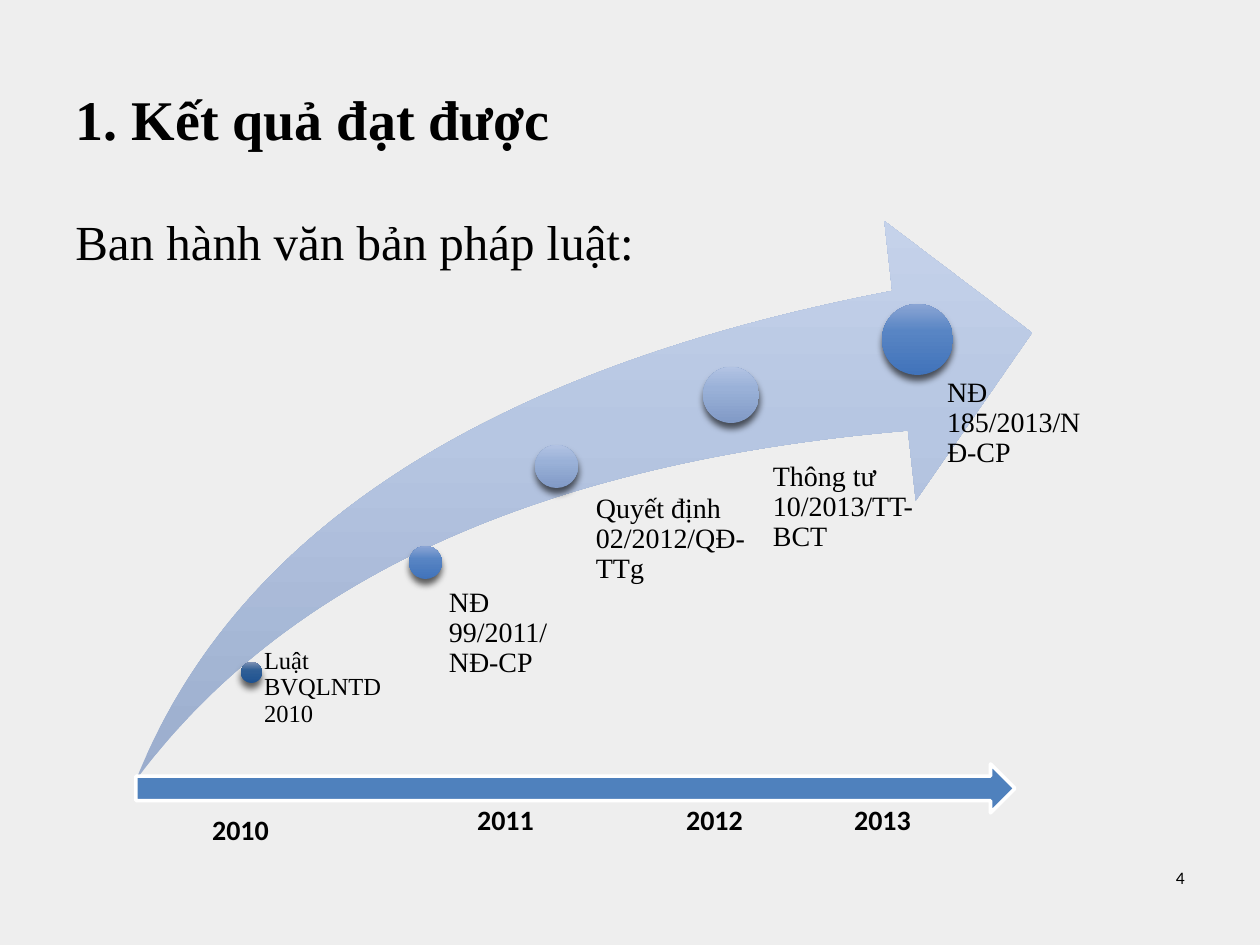
import typing

import pptx
import pptx.dml.color
import pptx.enum.shapes
import pptx.enum.text
import pptx.oxml
import pptx.oxml.ns
import pptx.util

RGB = pptx.dml.color.RGBColor
SHAPE = pptx.enum.shapes.MSO_SHAPE
ALIGN = pptx.enum.text.PP_ALIGN
ANCHOR = pptx.enum.text.MSO_ANCHOR

SCALE = pptx.util.Inches(1) / 126
BLACK = RGB(0, 0, 0)
WHITE = RGB(0xFF, 0xFF, 0xFF)
PAPER = RGB(0xEE, 0xEE, 0xEE)
BLUE = RGB(0x4F, 0x81, 0xBD)
SERIF = "Times New Roman"
SANS = "Calibri"


def ramp(*codes: str) -> tuple[RGB, ...]:
    return tuple(RGB.from_string(code) for code in codes)


SWOOSH = ramp("9BADCD", "B6C6E2", "C5D2EA")
DARK = ramp("1E5291", "305F96", "7E91B3")
MID = ramp("4173BA", "5885C4", "8BA5D4")
PALE = ramp("819AC6", "9AB1D8", "B2C3E3")


class Box(typing.NamedTuple):
    left: int
    top: int
    width: int
    height: int


class Law(typing.NamedTuple):
    name: str
    dot: Box
    shade: tuple[RGB, ...]
    label: Box
    inset: int
    size: int = 16


class Year(typing.NamedTuple):
    name: str
    left: int
    top: int = 788


LAWS = [
    Law("Luật BVQLNTD2010", Box(241, 662, 21, 21), DARK,
        Box(253, 648, 135, 134), 11, 14),
    Law("NĐ 99/2011/NĐ-CP", Box(409, 546, 33, 33), MID,
        Box(431, 588, 126, 150), 18),
    Law("Quyết định 02/2012/QĐ-TTg", Box(535, 445, 43, 43), PALE,
        Box(567, 494, 179, 199), 29),
    Law("Thông tư 10/2013/TT-BCT", Box(703, 367, 56, 56), PALE,
        Box(735, 462, 179, 183), 38),
    Law("NĐ 185/2013/NĐ-CP", Box(882, 304, 71, 71), MID,
        Box(924, 378, 173, 315), 23),
]
YEARS = [Year("2010", 156, 798), Year("2011", 421), Year("2012", 630), Year("2013", 798)]


def px(count: int) -> int:
    return round(count * SCALE)


def place(box: Box) -> list[int]:
    return [px(side) for side in box]


def apply(target: typing.Any, **values: typing.Any) -> None:
    for name, value in values.items():
        setattr(target, name, value)


def write(frame: typing.Any, text: str, size: int, face: str = SERIF,
          bold: bool = False, align: ALIGN = ALIGN.LEFT, space: float = 1.0,
          anchor: ANCHOR = ANCHOR.TOP, inset: typing.Optional[tuple[int, ...]] = None) -> None:
    """Fill a text frame; inset is left, top, right, bottom in px."""
    apply(frame, text=text, word_wrap=True, vertical_anchor=anchor)
    if inset:
        sides = ("margin_left", "margin_top", "margin_right", "margin_bottom")
        apply(frame, **dict(zip(sides, map(px, inset))))
    para = frame.paragraphs[0]
    apply(para, alignment=align, line_spacing=space)
    font = para.runs[0].font
    apply(font, name=face, size=pptx.util.Pt(size), bold=bold)
    font.color.rgb = BLACK


def add_text(slide: typing.Any, box: Box, text: str, size: int, **style: typing.Any) -> None:
    write(slide.shapes.add_textbox(*place(box)).text_frame, text, size, **style)


def add_shape(slide: typing.Any, kind: SHAPE, box: Box) -> typing.Any:
    shape = slide.shapes.add_shape(kind, *place(box))
    shape.shadow.inherit = False
    return shape


def blend(shape: typing.Any, shade: tuple[RGB, ...]) -> None:
    """Give the shape an upward three-stop gradient and no line."""
    shape.line.fill.background()
    shape.fill.background()
    stops = "".join(
        f'<a:gs pos="{spot}"><a:srgbClr val="{color}"/></a:gs>'
        for spot, color in zip((0, 62000, 100000), shade))
    grad = pptx.oxml.parse_xml(
        f'<a:gradFill {pptx.oxml.ns.nsdecls("a")} rotWithShape="1"><a:gsLst>{stops}</a:gsLst>'
        '<a:lin ang="16200000" scaled="0"/></a:gradFill>')
    props = shape.element.spPr
    props.replace(props.find(pptx.oxml.ns.qn("a:noFill")), grad)


def cast(shape: typing.Any) -> None:
    """Add a soft shadow below the shape."""
    glow = pptx.oxml.parse_xml(
        f'<a:outerShdw {pptx.oxml.ns.nsdecls("a")} blurRad="50800" dist="38100" dir="5400000"'
        ' rotWithShape="0"><a:srgbClr val="000000"><a:alpha val="61000"/></a:srgbClr>'
        '</a:outerShdw>')
    shape.element.spPr.find(pptx.oxml.ns.qn("a:effectLst")).append(glow)


def add_law(slide: typing.Any, law: Law) -> None:
    dot = add_shape(slide, SHAPE.OVAL, law.dot)
    blend(dot, law.shade)
    cast(dot)
    add_text(slide, law.label, law.name, law.size, space=0.9, inset=(law.inset, 0, 0, 0))


def add_year(slide: typing.Any, year: Year) -> None:
    add_text(slide, Box(year.left, year.top, 169, 67), year.name, 16, face=SANS, bold=True,
             align=ALIGN.CENTER, space=0.9, anchor=ANCHOR.MIDDLE, inset=(0, 23, 0, 23))


def main() -> None:
    deck = pptx.Presentation()
    apply(deck, slide_width=px(1260), slide_height=px(945))
    slide = deck.slides.add_slide(deck.slide_layouts[5])
    back = slide.background.fill
    back.solid()
    back.fore_color.rgb = PAPER

    title = slide.shapes.title
    spot = place(Box(63, 54, 1134, 129))
    apply(title, **dict(zip(Box._fields, spot)))
    write(title.text_frame, "1. Kết quả đạt được", 32, bold=True, anchor=ANCHOR.MIDDLE)
    add_text(slide, Box(63, 205, 1134, 618), "Ban hành văn bản pháp luật:", 28)

    swoosh = add_shape(slide, SHAPE.SWOOSH_ARROW, Box(136, 221, 896, 559))
    swoosh.adjustments[0] = swoosh.adjustments[1] = 0.25
    blend(swoosh, SWOOSH)
    for law in LAWS:
        add_law(slide, law)

    axis = add_shape(slide, SHAPE.RIGHT_ARROW, Box(136, 764, 879, 49))
    axis.fill.solid()
    axis.fill.fore_color.rgb = BLUE
    axis.line.color.rgb = WHITE
    axis.line.width = pptx.util.Pt(2)
    for year in YEARS:
        add_year(slide, year)

    add_text(slide, Box(903, 861, 294, 66), "4", 10, face=SANS, align=ALIGN.RIGHT)
    deck.save("out.pptx")


if __name__ == "__main__":
    main()
